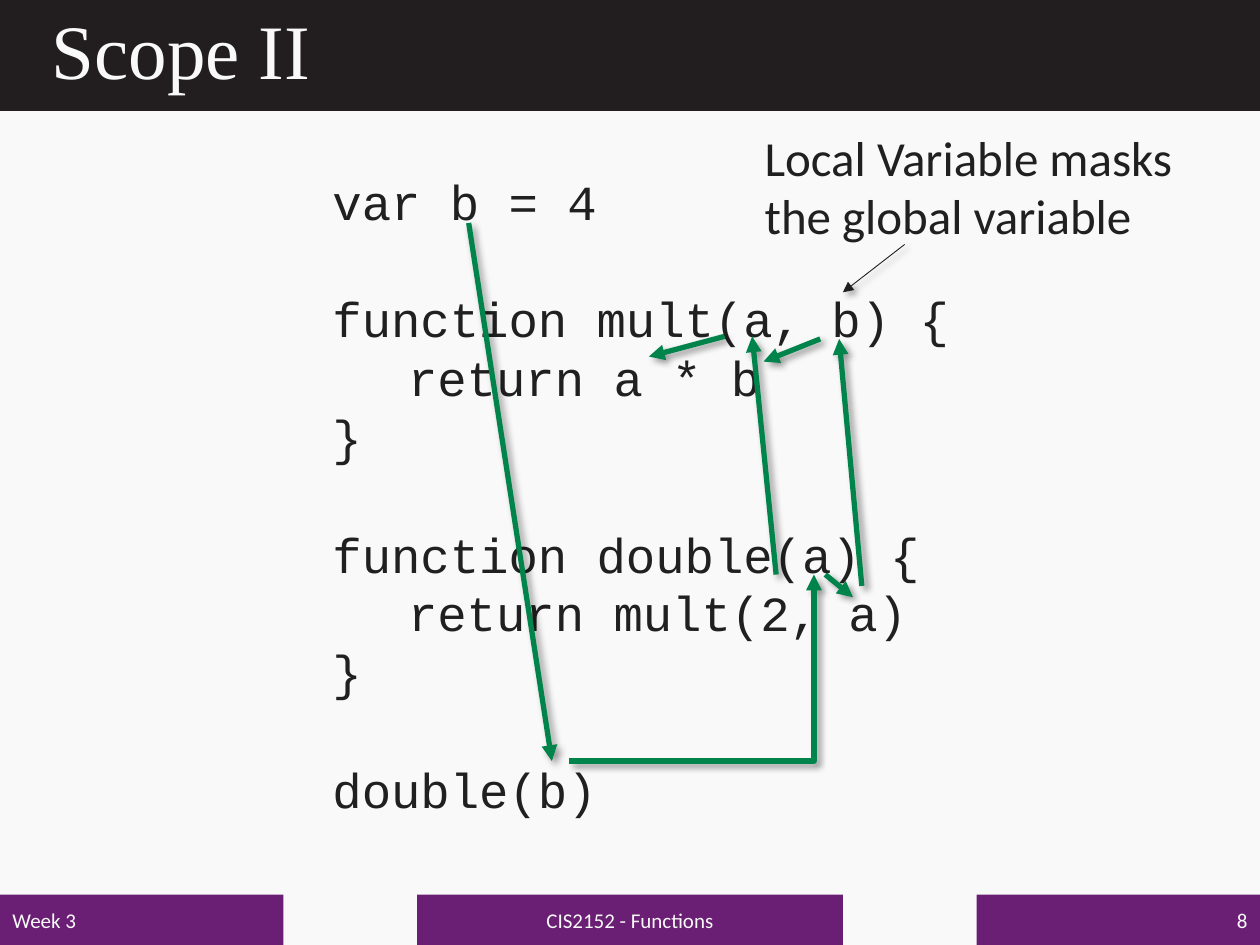
from lxml import etree
from pptx import Presentation
from pptx.dml.color import RGBColor
from pptx.enum.shapes import MSO_CONNECTOR, MSO_SHAPE
from pptx.enum.text import MSO_ANCHOR, PP_ALIGN
from pptx.oxml.ns import qn
from pptx.util import Inches, Pt

RECT = MSO_SHAPE.RECTANGLE
STRAIGHT, ELBOW = MSO_CONNECTOR.STRAIGHT, MSO_CONNECTOR.ELBOW
LEFT, CENTER, RIGHT = PP_ALIGN.LEFT, PP_ALIGN.CENTER, PP_ALIGN.RIGHT
MIDDLE = MSO_ANCHOR.MIDDLE

COLORS = {"paper": "F9F9F9", "band": "221E1F", "foot": "6A1F74",
          "ink": "202020", "flow": "00844B", "shade": "000000"}
PITCH = Pt(33.6)

# Code blocks: a blank line's gap goes above each block; True marks an indent
CODE = [
    [("var b = 4", False)],
    [("function mult(a, b) {", False), ("return a * b", True), ("}", False)],
    [("function double(a) {", False), ("return mult(2, a)", True), ("}", False)],
    [("double(b)", False)],
]

# Start and end of each straight arrow, relative to the code box
FLOWS = [
    ((1.18, 0.5), (1.84, 4.77)),
    ((4.01, 3.29), (4.23, 3.47)),
    ((4.3, 3.38), (4.12, 1.42)),
    ((3.62, 3.29), (3.43, 1.4)),
    ((3.97, 1.42), (3.52, 1.6)),
    ((3.21, 1.4), (2.61, 1.56)),
]
BEND = ((1.98, 4.77), (3.92, 3.29))


def color(name):
    return RGBColor.from_string(COLORS[name])


def style(para, font, size, tint, align=LEFT):
    para.alignment = align
    for run in para.runs:
        run.font.name = font
        run.font.size = Pt(size)
        run.font.color.rgb = color(tint)


def add_bar(slide, box, tint):
    bar = slide.shapes.add_shape(RECT, *map(Inches, box))
    bar.shadow.inherit = False
    bar.fill.solid()
    bar.fill.fore_color.rgb = color(tint)
    bar.line.fill.background()
    return bar


def add_box(slide, box):
    frame = slide.shapes.add_textbox(*map(Inches, box)).text_frame
    frame.word_wrap = True
    return frame


def add_head(slide, box):
    add_bar(slide, box, "band")
    title = slide.shapes.title
    left, top, wide, high = box
    title.left, title.top = Inches(left + 0.31), Inches(top)
    title.width, title.height = Inches(wide - 0.61), Inches(high - 0.02)
    frame = title.text_frame
    frame.text = "Scope II"
    frame.vertical_anchor = MIDDLE
    para = frame.paragraphs[0]
    para.line_spacing = 0.9
    style(para, "Times New Roman", 44, "paper")
    # Keep the title in front of its band
    slide.shapes._spTree.append(title._element)


def add_foot(slide, box):
    left, top, wide, high = box
    parts = [("Week 3", 0, 2.25, LEFT),
             ("CIS2152 - Functions", (wide - 3.38) / 2, 3.38, CENTER),
             ("8", wide - 2.25, 2.25, RIGHT)]
    for text, shift, span, align in parts:
        bar = add_bar(slide, (left + shift, top, span, high), "foot")
        bar.text_frame.text = text
        bar.text_frame.vertical_anchor = MIDDLE
        style(bar.text_frame.paragraphs[0], "Calibri", 12, "paper", align)


def add_code(slide, box):
    frame = add_box(slide, box)
    frame.margin_top = Inches(0.09)
    frame.text = "\n".join(text for block in CODE for text, _ in block)
    paras = iter(frame.paragraphs)
    for i, block in enumerate(CODE):
        for j, (_, inset) in enumerate(block):
            para = next(paras)
            para.line_spacing = PITCH
            if i and not j:
                para.space_before = PITCH
            if inset:
                para._p.get_or_add_pPr().set("marL", str(Inches(0.6)))
            style(para, "Courier New", 28, "ink")


def add_arrow(slide, start, end, tint="flow", width=3, kind=STRAIGHT):
    arrow = slide.shapes.add_connector(kind, *map(Inches, (*start, *end)))
    arrow.line.color.rgb = color(tint)
    arrow.line.width = Pt(width)
    etree.SubElement(arrow.line._get_or_add_ln(), qn("a:tailEnd"), type="triangle")
    # Soft shadow to the lower right
    fx = etree.SubElement(arrow._element.spPr, qn("a:effectLst"))
    drop = etree.SubElement(fx, qn("a:outerShdw"), blurRad=str(Pt(4)),
                            dist=str(Pt(3)), dir="2700000", algn="tl",
                            rotWithShape="0")
    tone = etree.SubElement(drop, qn("a:srgbClr"), val=COLORS["shade"])
    etree.SubElement(tone, qn("a:alpha"), val="40000")
    return arrow


def add_flows(slide, box):
    left, top = box[:2]

    def place(spot):
        return left + spot[0], top + spot[1]

    for start, end in FLOWS:
        add_arrow(slide, place(start), place(end))
    bend = add_arrow(slide, place(BEND[0]), place(BEND[1]), kind=ELBOW)
    # Turn the corner at the far end
    geom = bend._element.spPr.find(qn("a:prstGeom"))
    guides = geom.find(qn("a:avLst"))
    if guides is None:
        guides = etree.SubElement(geom, qn("a:avLst"))
    etree.SubElement(guides, qn("a:gd"), name="adj1", fmla="val 100000")


def add_note(slide, box):
    left, top = box[:2]
    add_arrow(slide, (left + 1.21, top + 0.98), (left + 0.72, top + 1.36),
              "ink", 0.5)
    frame = add_box(slide, box)
    frame.text = "Local Variable masks the global variable"
    style(frame.paragraphs[0], "Calibri", 28, "ink")


def main():
    deck = Presentation()
    deck.slide_width, deck.slide_height = Inches(10), Inches(7.5)
    slide = deck.slides.add_slide(deck.slide_layouts[5])
    slide.background.fill.solid()
    slide.background.fill.fore_color.rgb = color("paper")
    code = (2.54, 1.27, 5.21, 5.28)
    add_head(slide, (0, 0, 10, 0.88))
    add_foot(slide, (0, 7.1, 10, 0.4))
    add_code(slide, code)
    add_flows(slide, code)
    add_note(slide, (5.97, 0.96, 4.01, 1.04))
    deck.save("out.pptx")


if __name__ == "__main__":
    main()
